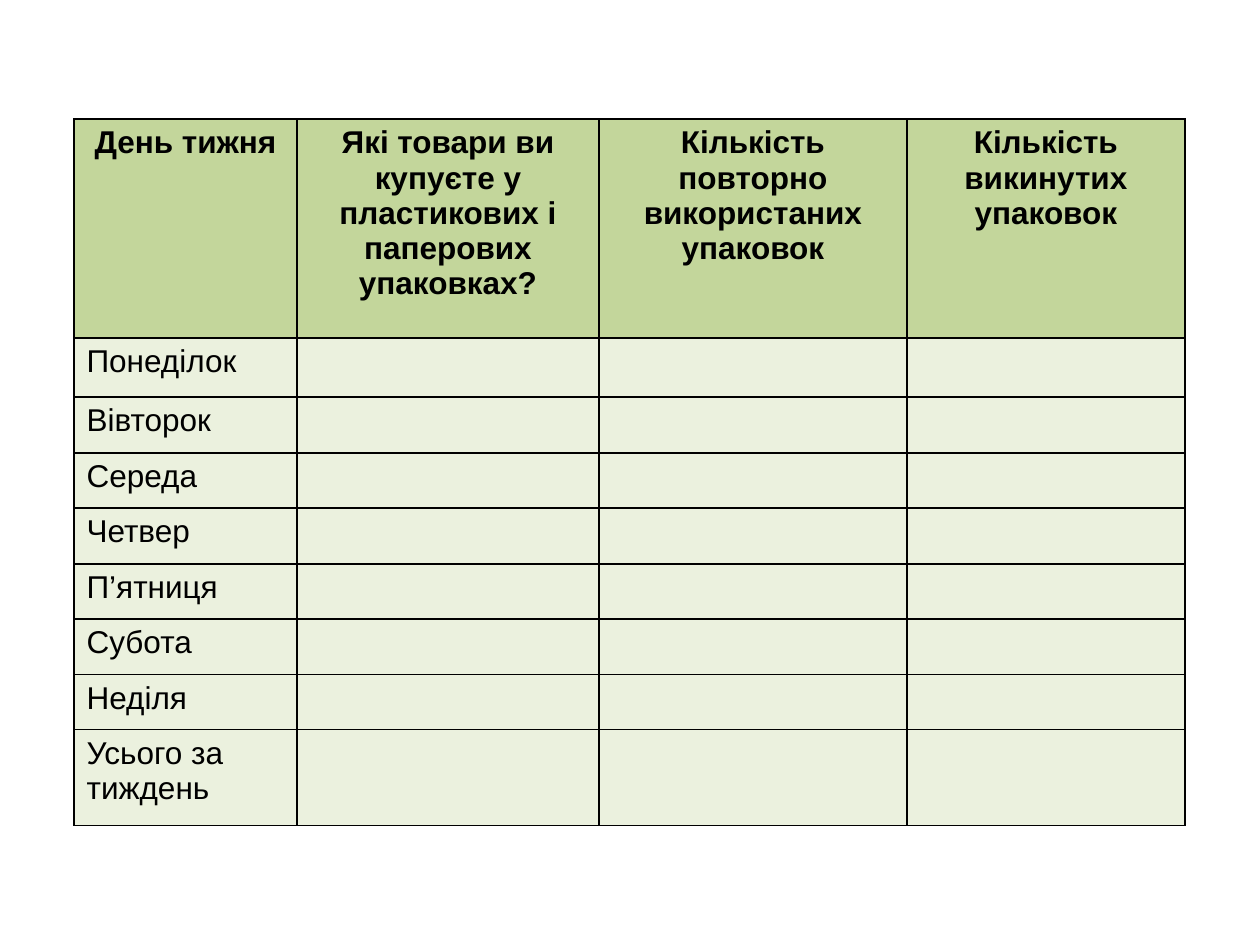
from lxml import etree
from pptx import Presentation
from pptx import util as u
from pptx.dml.color import RGBColor
from pptx.enum import text
from pptx.oxml.ns import qn

# Content
HEADERS = [
    "День тижня",
    "Які товари ви купуєте у пластикових і паперових упаковках?",
    "Кількість повторно використаних упаковок",
    "Кількість викинутих упаковок",
]
DAYS = ["Понеділок", "Вівторок", "Середа", "Четвер", "П’ятниця", "Субота", "Неділя"]
TOTAL = "Усього за тиждень"

# Theme and layout, lengths in px
THEME = {
    "font": "Arial",
    "size": 18,
    "text": "000000",
    "border": "000000",
    "border_width": 1,
    "header_fill": "C3D69B",
    "body_fill": "EBF1DE",
}
SCALE = u.Inches(1) // 126
SLIDE_SIZE = (1260, 945)
TABLE_ORIGIN = (74, 119)
COLUMN_WIDTHS = [223, 302, 308, 278]
ROW_HEIGHTS = [219, 59] + [56, 55] * 3 + [96]


def px(length):
    return u.Emu(length * SCALE)


def add_borders(cell):
    properties = cell._tc.get_or_add_tcPr()
    for side in ("a:lnL", "a:lnR", "a:lnT", "a:lnB"):
        line = etree.SubElement(properties, qn(side), w=str(u.Pt(THEME["border_width"])))
        fill = etree.SubElement(line, qn("a:solidFill"))
        etree.SubElement(fill, qn("a:srgbClr"), val=THEME["border"])


def style_cell(cell, is_header):
    add_borders(cell)
    cell.fill.solid()
    fill = THEME["header_fill"] if is_header else THEME["body_fill"]
    cell.fill.fore_color.rgb = RGBColor.from_string(fill)
    paragraph = cell.text_frame.paragraphs[0]
    paragraph.alignment = text.PP_ALIGN.CENTER if is_header else text.PP_ALIGN.LEFT
    for run in paragraph.runs:
        run.font.name = THEME["font"]
        run.font.size = u.Pt(THEME["size"])
        run.font.bold = is_header
        run.font.color.rgb = RGBColor.from_string(THEME["text"])


def main():
    presentation = Presentation()
    presentation.slide_width, presentation.slide_height = map(px, SLIDE_SIZE)
    slide = presentation.slides.add_slide(presentation.slide_layouts[6])

    # Table grid
    rows = [HEADERS] + [[label] for label in DAYS + [TOTAL]]
    size = (sum(COLUMN_WIDTHS), sum(ROW_HEIGHTS))
    table = slide.shapes.add_table(
        len(rows), len(HEADERS), *map(px, TABLE_ORIGIN + size)
    ).table
    for column, width in zip(table.columns, COLUMN_WIDTHS):
        column.width = px(width)
    for row, height in zip(table.rows, ROW_HEIGHTS):
        row.height = px(height)

    # Text and cell styles
    for row_index, labels in enumerate(rows):
        for column_index, label in enumerate(labels):
            table.cell(row_index, column_index).text_frame.text = label
        for cell in table.rows[row_index].cells:
            style_cell(cell, is_header=row_index == 0)

    presentation.save("out.pptx")


if __name__ == "__main__":
    main()
